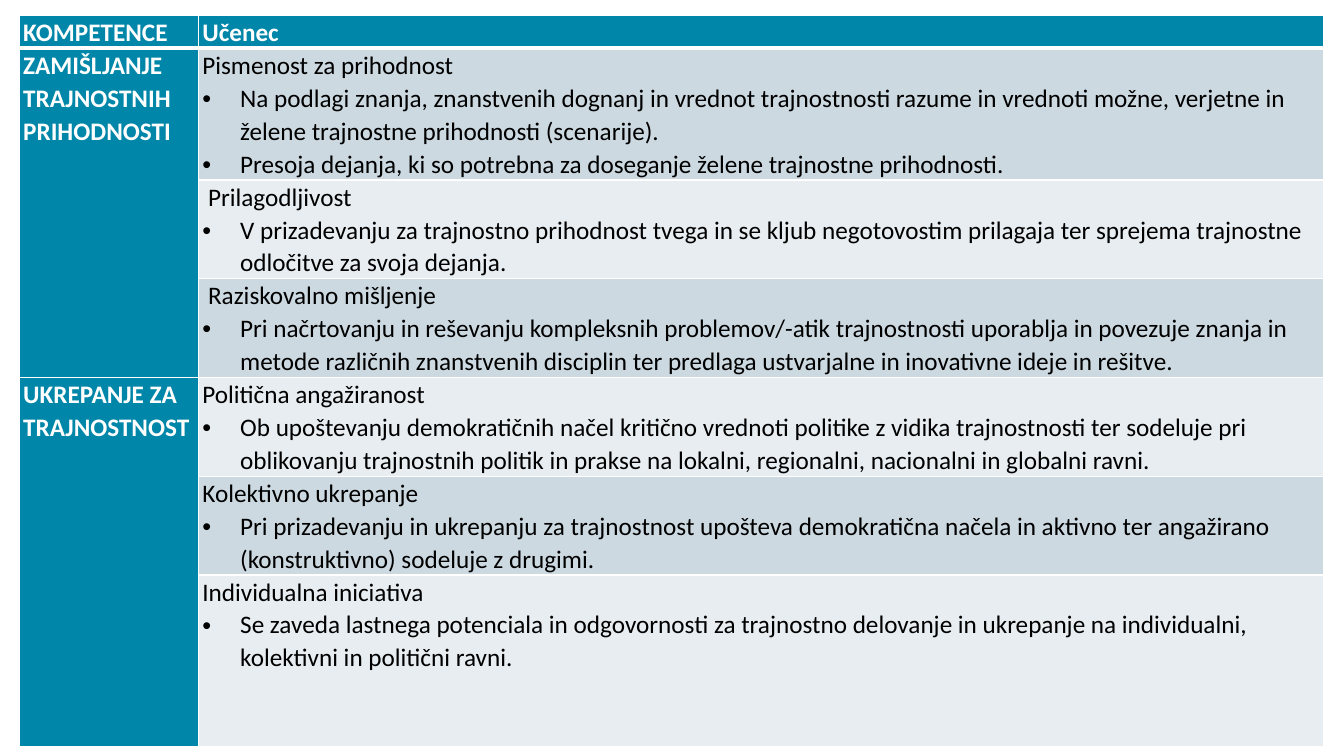
"""Builds a slide with a table of sustainability competences for the pupil."""
from lxml import etree
from pptx import Presentation
from pptx.dml.color import RGBColor
from pptx.oxml.ns import qn
from pptx.util import Pt

WHITE = RGBColor(0xFF, 0xFF, 0xFF)
BLACK = RGBColor(0x00, 0x00, 0x00)
TEAL = RGBColor(0x00, 0x86, 0xA8)
DARK = RGBColor(0xCC, 0xD9, 0xE1)
LIGHT = RGBColor(0xE7, 0xED, 0xF1)
INDENT = Pt(27)

HEADS = ["KOMPETENCE", "Učenec"]
GROUPS = [
    ("ZAMIŠLJANJE TRAJNOSTNIH PRIHODNOSTI", [
        ["Pismenost za prihodnost",
         "Na podlagi znanja, znanstvenih dognanj in vrednot trajnostnosti razume in vrednoti "
         "možne, verjetne in želene trajnostne prihodnosti (scenarije).",
         "Presoja dejanja, ki so potrebna za doseganje želene trajnostne prihodnosti."],
        [" Prilagodljivost",
         "V prizadevanju za trajnostno prihodnost tvega in se kljub negotovostim prilagaja "
         "ter sprejema trajnostne odločitve za svoja dejanja."],
        [" Raziskovalno mišljenje",
         "Pri načrtovanju in reševanju kompleksnih problemov/-atik trajnostnosti uporablja in "
         "povezuje znanja in metode različnih znanstvenih disciplin ter predlaga ustvarjalne "
         "in inovativne ideje in rešitve."],
    ]),
    ("UKREPANJE ZA TRAJNOSTNOST", [
        ["Politična angažiranost",
         "Ob upoštevanju demokratičnih načel kritično vrednoti politike z vidika trajnostnosti "
         "ter sodeluje pri oblikovanju trajnostnih politik in prakse na lokalni, regionalni, "
         "nacionalni in globalni ravni."],
        ["Kolektivno ukrepanje",
         "Pri prizadevanju in ukrepanju za trajnostnost upošteva demokratična načela in "
         "aktivno ter angažirano (konstruktivno) sodeluje z drugimi."],
        ["Individualna iniciativa",
         "Se zaveda lastnega potenciala in odgovornosti za trajnostno delovanje in ukrepanje "
         "na individualni, kolektivni in politični ravni."],
    ]),
]
WIDTHS = [128, 803.7]
HEIGHTS = [19.4, 80.6, 59.8, 59.8, 59.8, 59.8, 122.4]


def style_cell(cell, fill, top, bottom):
    cell.margin_left = cell.margin_right = Pt(2.7)
    cell.margin_top = cell.margin_bottom = 0
    props = cell._tc.get_or_add_tcPr()
    for side, width in zip("LRTB", (1, 1, top, bottom)):
        line = etree.SubElement(props, qn(f"a:ln{side}"), w=str(Pt(width)))
        paint = etree.SubElement(line, qn("a:solidFill"))
        etree.SubElement(paint, qn("a:srgbClr"), val=str(WHITE))
    cell.fill.solid()
    cell.fill.fore_color.rgb = fill


def write_cell(cell, texts, color, bold):
    frame = cell.text_frame
    for i, text in enumerate(texts):
        para = frame.add_paragraph() if i else frame.paragraphs[0]
        if i:
            props = para._p.get_or_add_pPr()
            props.set("marL", str(INDENT))
            props.set("indent", str(-INDENT))
            etree.SubElement(props, qn("a:buFont"), typeface="Arial")
            etree.SubElement(props, qn("a:buChar"), char="•")
        para.line_spacing = 1.07
        run = para.add_run()
        run.text = text
        run.font.name = "Calibri"
        run.font.size = Pt(18)
        run.font.bold = bold
        run.font.color.rgb = color


deck = Presentation()
deck.slide_width, deck.slide_height = Pt(960), Pt(540)
slide = deck.slides.add_slide(deck.slide_layouts[6])

frame = slide.shapes.add_table(len(HEIGHTS), len(WIDTHS), Pt(13.9), Pt(11),
                               Pt(sum(WIDTHS)), Pt(sum(HEIGHTS)))
table = frame.table
table.first_col = True
for col, width in zip(table.columns, WIDTHS):
    col.width = Pt(width)
for row, height in zip(table.rows, HEIGHTS):
    row.height = Pt(height)
frame.height = Pt(515.5)

for r in range(len(HEIGHTS)):
    band = DARK if r % 2 else LIGHT
    for c in range(len(WIDTHS)):
        fill = TEAL if r == 0 or c == 0 else band
        style_cell(table.cell(r, c), fill, 3 if r == 1 else 1, 3 if r == 0 else 1)

for c, head in enumerate(HEADS):
    write_cell(table.cell(0, c), [head], WHITE, True)

start = 1
for name, skills in GROUPS:
    end = start + len(skills) - 1
    table.cell(start, 0).merge(table.cell(end, 0))
    write_cell(table.cell(start, 0), [name], WHITE, True)
    for r, texts in enumerate(skills, start):
        write_cell(table.cell(r, 1), texts, BLACK, False)
    start = end + 1

deck.save("out.pptx")
